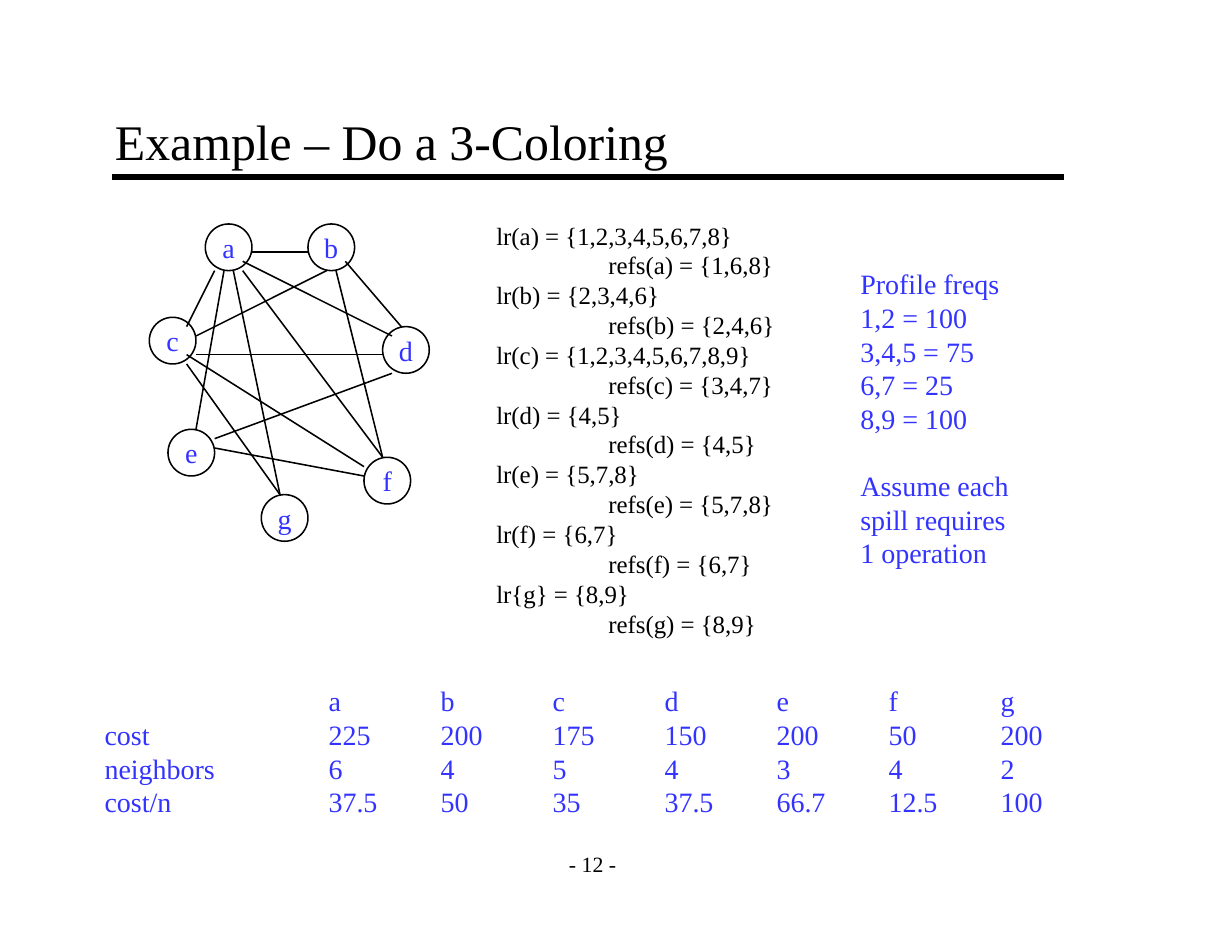
from pptx import Presentation, util as u
from pptx.dml.color import RGBColor
from pptx.enum import shapes, text
from pptx.oxml.ns import qn
from lxml import etree

BLACK, BLUE = "000000", "3333FF"
FONT = "Times New Roman"
CELL = u.Inches(1) / 12
NODE = 5
LINE_HEIGHT = 1.2

NODES = {"a": (22, 24), "g": (28, 53), "c": (16, 34), "f": (39, 49),
         "d": (41, 35), "b": (33, 24), "e": (18, 46)}
EDGES = [
    (20, 35, 23, 29), (21, 36, 35, 29), (21, 38, 41, 38), (20, 38, 39, 50),
    (20, 39, 30, 53), (27, 27, 33, 27), (26, 28, 42, 36), (26, 29, 41, 49),
    (25, 29, 30, 53), (24, 29, 21, 46), (37, 28, 43, 35), (36, 29, 41, 49),
    (42, 40, 23, 47), (23, 48, 39, 51),
]
LIVE_RANGES = [
    "lr(a) = {1,2,3,4,5,6,7,8}", "refs(a) = {1,6,8}",
    "lr(b) = {2,3,4,6}", "refs(b) = {2,4,6}",
    "lr(c) = {1,2,3,4,5,6,7,8,9}", "refs(c) = {3,4,7}",
    "lr(d) = {4,5}", "refs(d) = {4,5}",
    "lr(e) = {5,7,8}", "refs(e) = {5,7,8}",
    "lr(f) = {6,7}", "refs(f) = {6,7}",
    "lr{g} = {8,9}", "refs(g) = {8,9}",
]
PROFILE = ["Profile freqs", "1,2 = 100", "3,4,5 = 75", "6,7 = 25", "8,9 = 100",
           "Assume each", "spill requires", "1 operation"]
COSTS = [
    ["", "a", "b", "c", "d", "e", "f", "g"],
    ["cost", "225", "200", "175", "150", "200", "50", "200"],
    ["neighbors", "6", "4", "5", "4", "3", "4", "2"],
    ["cost/n", "37.5", "50", "35", "37.5", "66.7", "12.5", "100"],
]


def color(value):
    return RGBColor.from_string(value)


def grid(*cells):
    return [round(cell * CELL) for cell in cells]


class Canvas:
    def __init__(self, presentation):
        self.slide = presentation.slides.add_slide(presentation.slide_layouts[5])

    def style(self, frame, size, ink, align=text.PP_ALIGN.LEFT):
        for paragraph in frame.paragraphs:
            paragraph.alignment = align
            for run in paragraph.runs:
                run.font.name = FONT
                run.font.size = u.Pt(size)
                run.font.color.rgb = color(ink)

    def title(self, words, *box):
        shape = self.slide.shapes.title
        shape.left, shape.top, shape.width, shape.height = grid(*box)
        frame = shape.text_frame
        frame.text = words
        frame.vertical_anchor = text.MSO_ANCHOR.BOTTOM
        frame.margin_left = frame.margin_right = u.Inches(0.11)
        frame.margin_top = frame.margin_bottom = u.Inches(0.06)
        self.style(frame, 32, BLACK)

    def line(self, ends, width=1):
        connector = self.slide.shapes.add_connector(
            shapes.MSO_CONNECTOR.STRAIGHT, *grid(*ends))
        connector.line.color.rgb = color(BLACK)
        connector.line.width = u.Pt(width)
        etree.SubElement(connector._element.spPr, qn("a:effectLst"))

    def node(self, label, column, row):
        shape = self.slide.shapes.add_shape(
            shapes.MSO_SHAPE.OVAL, *grid(column, row, NODE, NODE))
        shape.shadow.inherit = False
        shape.fill.background()
        shape.line.color.rgb = color(BLACK)
        shape.line.width = u.Pt(1)
        frame = shape.text_frame
        frame.text = label
        frame.word_wrap = False
        frame.vertical_anchor = text.MSO_ANCHOR.MIDDLE
        self.style(frame, 18, BLUE, text.PP_ALIGN.CENTER)

    def lines(self, words, box, size, ink, align=text.PP_ALIGN.LEFT,
              anchor=text.MSO_ANCHOR.TOP):
        frame = self.slide.shapes.add_textbox(*grid(*box)).text_frame
        frame.text = "\n".join(words)
        frame.word_wrap = True
        frame.vertical_anchor = anchor
        self.style(frame, size, ink, align)
        for paragraph in frame.paragraphs:
            paragraph.line_spacing = u.Pt(size * LINE_HEIGHT)
        return frame.paragraphs

    def table(self, rows, box, size, ink):
        table = self.slide.shapes.add_table(
            len(rows), len(rows[0]), *grid(*box)).table
        table.first_row = table.horz_banding = False
        for index, column in enumerate(table.columns):
            column.width = u.Inches(1 if index else 2)
        for row, values in zip(table.rows, rows):
            for cell, value in zip(row.cells, values):
                cell.fill.background()
                cell.margin_top = cell.margin_bottom = 0
                cell.text = value
                self.style(cell.text_frame, size, ink)


def main():
    presentation = Presentation()
    presentation.slide_width, presentation.slide_height = u.Inches(11), u.Inches(8.5)
    canvas = Canvas(presentation)
    canvas.line((12, 19, 114, 19), 4)
    canvas.lines(["- 12 -"], (59, 90, 9, 5), 14, BLACK,
                 text.PP_ALIGN.CENTER, text.MSO_ANCHOR.MIDDLE)
    canvas.title("Example – Do a 3-Coloring", 11, 11, 102, 8)
    for label, place in NODES.items():
        canvas.node(label, *place)
    for edge in EDGES:
        canvas.line(edge)
    canvas.table(COSTS, (10, 73.6, 108, 14.4), 18, BLUE)
    ranges = canvas.lines(LIVE_RANGES, (52, 23, 33, 46), 16, BLACK)
    for paragraph in ranges[1::2]:
        paragraph._p.get_or_add_pPr().set("marL", str(u.Inches(1)))
    profile = canvas.lines(PROFILE, (91, 28, 19, 33.6), 18, BLUE)
    profile[PROFILE.index("Assume each")].space_before = u.Pt(18 * LINE_HEIGHT)
    presentation.save("out.pptx")


if __name__ == "__main__":
    main()
